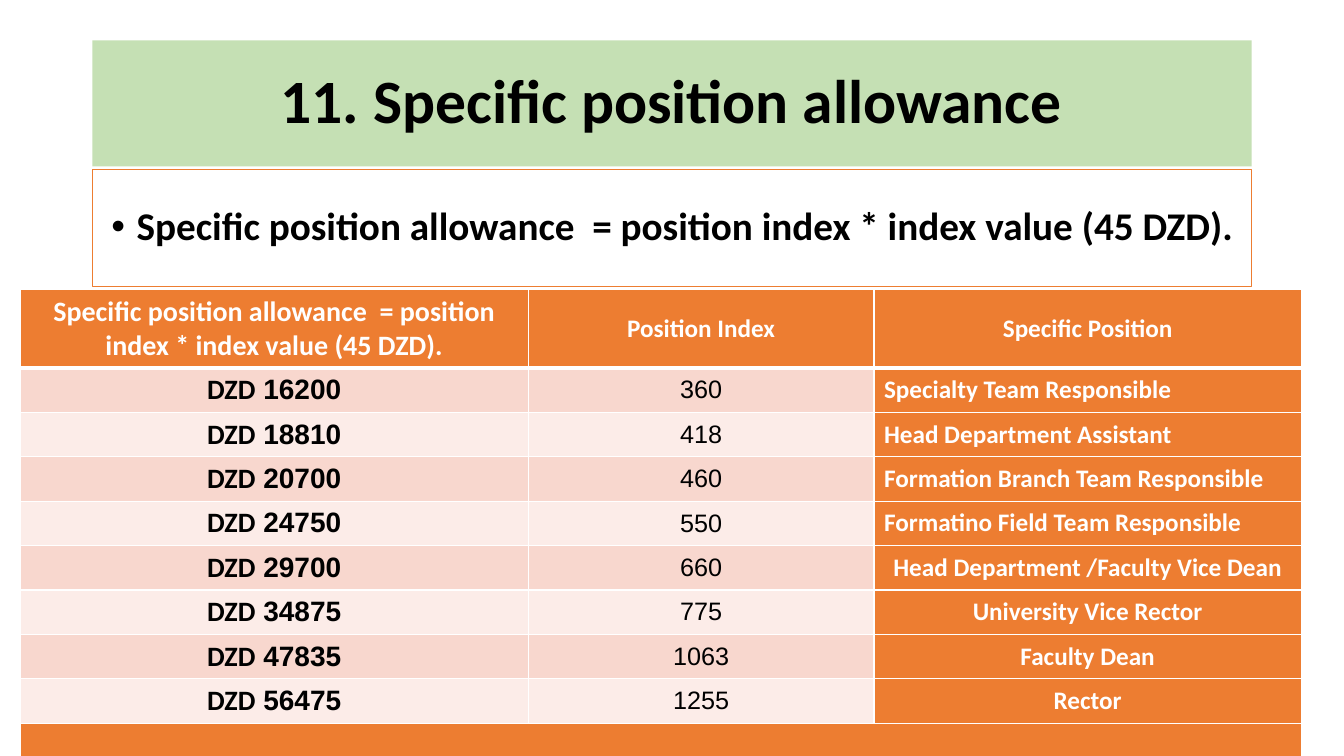
import pptx
import pptx.util
import pptx.dml.color
import pptx.enum.text
import pptx.oxml.ns
import lxml.etree

Pt = pptx.util.Pt
ALIGN = pptx.enum.text.PP_ALIGN
MIDDLE = pptx.enum.text.MSO_ANCHOR.MIDDLE

BLACK, WHITE, ORANGE, GREEN = "000000", "FFFFFF", "ED7D31", "C5E0B4"
BANDS = ["F8D7CE", "FCECE8"]
INDEX_VALUE = 45
FORMULA = "Specific position allowance  = position index * index value (45 DZD)."
POSITIONS = [
    ("Specialty Team Responsible", 360, False),
    ("Head Department Assistant", 418, False),
    ("Formation Branch Team Responsible", 460, False),
    ("Formatino Field Team Responsible", 550, False),
    ("Head Department /Faculty Vice Dean", 660, True),
    ("University Vice Rector", 775, True),
    ("Faculty Dean", 1063, True),
    ("Rector", 1255, True),
]


def color(value):
    return pptx.dml.color.RGBColor.from_string(value)


def add_element(parent, tag, **attributes):
    element = lxml.etree.SubElement(parent, pptx.oxml.ns.qn(tag))
    for name, value in attributes.items():
        element.set(name, value)
    return element


def add_run(para, text, size, ink, bold=True):
    span = para.add_run()
    span.text = text
    span.font.name = "Calibri"
    span.font.size = Pt(size)
    span.font.bold = bold
    span.font.color.rgb = color(ink)
    return span


def format_placeholder(box, place, fill, text, size, indent, bullet=None, line=None):
    box.left, box.top, box.width, box.height = [Pt(length) for length in place]
    box.fill.solid()
    box.fill.fore_color.rgb = color(fill)
    if line:
        box.line.color.rgb = color(line)
        box.line.width = Pt(1)
    frame = box.text_frame
    frame.word_wrap = True
    frame.auto_size = pptx.enum.text.MSO_AUTO_SIZE.NONE
    frame.vertical_anchor = MIDDLE
    para = frame.paragraphs[0]
    properties = para._p.get_or_add_pPr()
    properties.set("marL", str(Pt(indent)))
    properties.set("indent", str(-Pt(indent)))
    if bullet:
        add_element(properties, "a:buFont", typeface="Arial")
        add_element(properties, "a:buChar", char=bullet)
    para.alignment = ALIGN.CENTER
    para.line_spacing = 0.9
    para.space_before = Pt(0)
    add_run(para, text, size, BLACK)


def format_cell(cell, fill, top=1, bottom=1):
    properties = cell._tc.get_or_add_tcPr()
    for side, width in (("L", 1), ("R", 1), ("T", top), ("B", bottom)):
        border = add_element(properties, "a:ln" + side, w=str(Pt(width)))
        add_element(add_element(border, "a:solidFill"), "a:srgbClr", val=WHITE)
    cell.fill.solid()
    cell.fill.fore_color.rgb = color(fill)
    cell.vertical_anchor = MIDDLE


def write_cell(cell, text, size, ink, bold=True, centered=True, right_to_left=True):
    para = cell.text_frame.paragraphs[0]
    para.alignment = ALIGN.CENTER if centered else ALIGN.LEFT
    span = add_run(para, text, size, ink, bold)
    if right_to_left:
        para._p.get_or_add_pPr().set("rtl", "1")
        add_element(span._r.get_or_add_rPr(), "a:cs", typeface="Arial")


def add_allowance_table(page):
    widths = [362.9, 247, 305.3]
    heights = [53.3] + [30.2] * len(POSITIONS) + [28.1]
    frame = page.shapes.add_table(
        len(heights), len(widths), Pt(14.4), Pt(206.6), Pt(sum(widths)), Pt(sum(heights)))
    table = frame.table
    for column, width in zip(table.columns, widths):
        column.width = Pt(width)
    for row, height in zip(table.rows, heights):
        row.height = Pt(height)

    headings = [(FORMULA, 20, False), ("Position Index", 18, True), ("Specific Position", 18, True)]
    for column, (text, size, right_to_left) in enumerate(headings):
        cell = table.cell(0, column)
        format_cell(cell, ORANGE, bottom=3)
        write_cell(cell, text, size, WHITE, right_to_left=right_to_left)

    for row, (position, index, centered) in enumerate(POSITIONS, start=1):
        band = BANDS[(row - 1) % 2]
        allowance_cell, index_cell, position_cell = table.rows[row].cells
        for cell, fill in ((allowance_cell, band), (index_cell, band), (position_cell, ORANGE)):
            format_cell(cell, fill, top=3 if row == 1 else 1)
        write_cell(allowance_cell, f"{index * INDEX_VALUE} DZD", 20, BLACK)
        write_cell(index_cell, str(index), 18, BLACK, bold=False)
        write_cell(position_cell, position, 18, WHITE, centered=centered, right_to_left=centered)

    last = len(heights) - 1
    for cell in table.rows[last].cells:
        format_cell(cell, ORANGE)
    table.cell(last, 0).merge(table.cell(last, len(widths) - 1))


def main():
    deck = pptx.Presentation()
    deck.slide_width, deck.slide_height = Pt(960), Pt(540)
    page = deck.slides.add_slide(deck.slide_layouts[1])
    format_placeholder(page.shapes.title, (66, 28.8, 828, 90), GREEN,
                       "11. Specific position allowance", 44, 40.5)
    format_placeholder(page.placeholders[1], (66, 121, 828, 83.5), WHITE,
                       FORMULA, 28, 18, bullet="•", line=ORANGE)
    add_allowance_table(page)
    deck.save("out.pptx")


if __name__ == "__main__":
    main()
